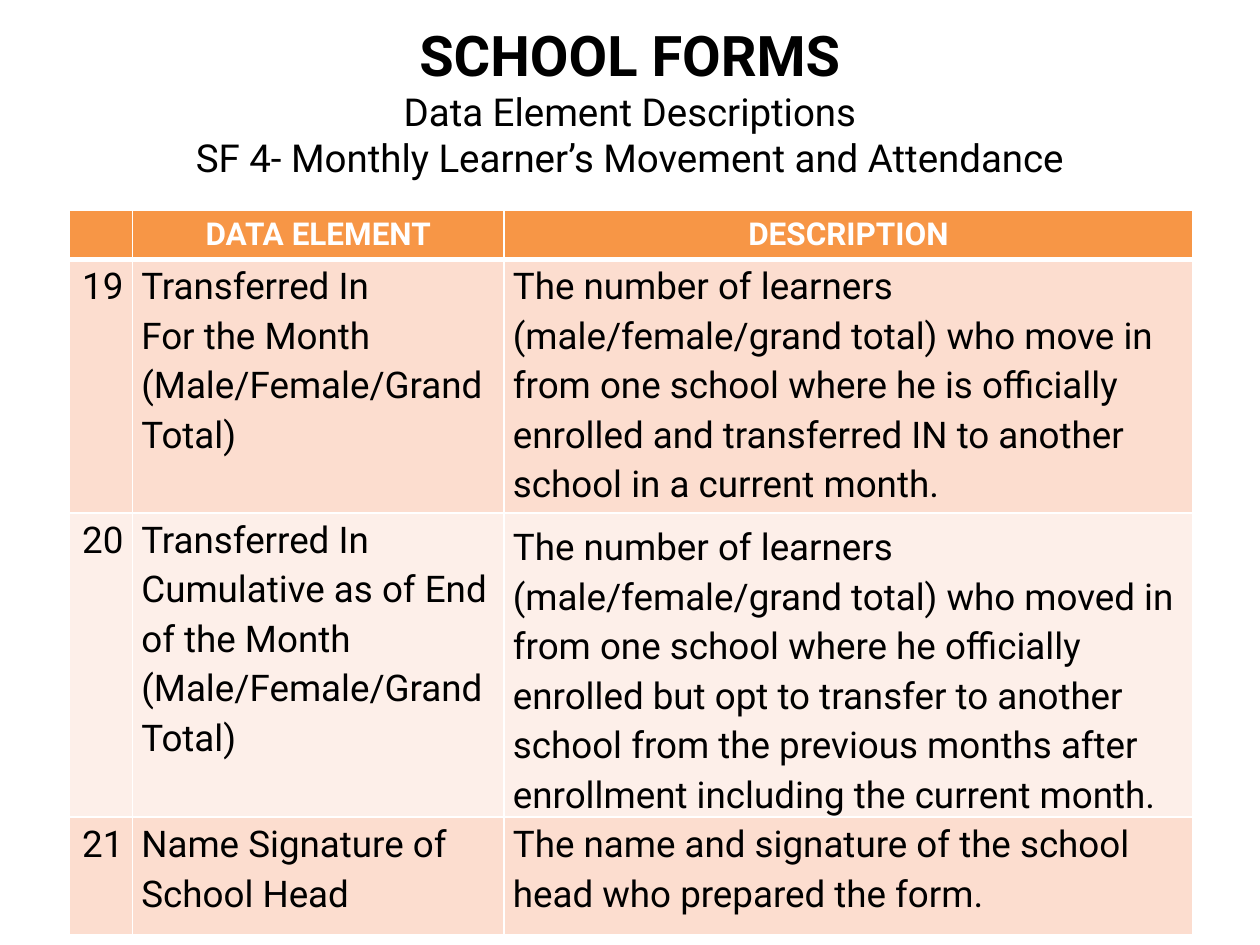
from lxml import etree
from pptx import Presentation
from pptx.dml.color import RGBColor
from pptx.enum import text
from pptx.oxml.ns import qn
from pptx.util import Cm, Pt

FONT = "Roboto"
BLACK = RGBColor(0x00, 0x00, 0x00)
WHITE = RGBColor(0xFF, 0xFF, 0xFF)
ORANGE = RGBColor(0xF7, 0x96, 0x46)
PEACH = RGBColor(0xFC, 0xDD, 0xCF)
PALE_PEACH = RGBColor(0xFD, 0xEF, 0xE9)

LEFT, CENTER, RIGHT = text.PP_ALIGN.LEFT, text.PP_ALIGN.CENTER, text.PP_ALIGN.RIGHT

TITLE_LINES = [
    ("SCHOOL FORMS", 32, True),
    ("Data Element Descriptions", 22, False),
    ("SF 4- Monthly Learner’s Movement and Attendance", 22, False),
]
COLUMN_WIDTHS = [1.27, 7.49, 13.89]
ROW_HEIGHTS = [0.99, 3.89, 5.87, 2.36]
ROWS = [
    ("", "DATA ELEMENT", "DESCRIPTION"),
    ("19", "Transferred In\nFor the Month\n(Male/Female/Grand Total)",
     "The number of learners (male/female/grand total) who move in from one school "
     "where he is officially enrolled and transferred IN to another school in a "
     "current month."),
    ("20", "Transferred In\nCumulative as of End of the Month\n(Male/Female/Grand Total)",
     "The number of learners (male/female/grand total) who moved in from one school "
     "where he officially enrolled but opt to transfer to another school from the "
     "previous months after enrollment including the current month."),
    ("21", "Name Signature of School Head",
     "The name and signature of the school head who prepared the form."),
]


def write_paragraph(paragraph, content, size, color, bold, alignment):
    """Fill a paragraph with text in one font."""
    paragraph.text = content
    paragraph.alignment = alignment
    font = paragraph.font
    font.name, font.size, font.bold = FONT, Pt(size), bold
    font.color.rgb = color


def add_title(slide):
    """Add the centred heading with its two subtitle lines."""
    box = slide.shapes.add_textbox(Cm(1.27), Cm(0.43), Cm(22.86), Cm(3.18))
    frame = box.text_frame
    frame.word_wrap = True
    frame.vertical_anchor = text.MSO_ANCHOR.MIDDLE
    for index, (content, size, bold) in enumerate(TITLE_LINES):
        paragraph = frame.add_paragraph() if index else frame.paragraphs[0]
        write_paragraph(paragraph, content, size, BLACK, bold, CENTER)


def set_borders(cell, bottom_width):
    """Draw white borders round a cell, with a chosen bottom width."""
    properties = cell._tc.get_or_add_tcPr()
    widths = {"a:lnL": 1, "a:lnR": 1, "a:lnT": 1, "a:lnB": bottom_width}
    for position, (tag, width) in enumerate(widths.items()):
        line = etree.Element(qn(tag), w=str(Pt(width)))
        fill = etree.SubElement(line, qn("a:solidFill"))
        etree.SubElement(fill, qn("a:srgbClr"), val=str(WHITE))
        properties.insert(position, line)


def format_cell(cell, content, fill, size, color, bold, alignment, bottom_width):
    """Set the text, fill and borders of a table cell."""
    cell.margin_left = cell.margin_right = Cm(0.18)
    cell.margin_top = cell.margin_bottom = 0
    cell.fill.solid()
    cell.fill.fore_color.rgb = fill
    set_borders(cell, bottom_width)
    paragraph = cell.text_frame.paragraphs[0]
    paragraph.line_spacing = 1.15
    write_paragraph(paragraph, content, size, color, bold, alignment)


def add_element_table(slide):
    """Add the table of data elements and their descriptions."""
    table = slide.shapes.add_table(
        len(ROWS), len(COLUMN_WIDTHS), Cm(1.4), Cm(4.24),
        Cm(sum(COLUMN_WIDTHS)), Cm(sum(ROW_HEIGHTS))).table
    for column, width in zip(table.columns, COLUMN_WIDTHS):
        column.width = Cm(width)
    for row, height in zip(table.rows, ROW_HEIGHTS):
        row.height = Cm(height)
    for row_index, contents in enumerate(ROWS):
        band = PEACH if row_index % 2 else PALE_PEACH
        for column_index, content in enumerate(contents):
            cell = table.cell(row_index, column_index)
            if row_index == 0:
                format_cell(cell, content, ORANGE, 18, WHITE, True, CENTER, 3)
            else:
                alignment = LEFT if column_index else RIGHT
                format_cell(cell, content, band, 21, BLACK, False, alignment, 1)
    table.cell(2, 2).vertical_anchor = text.MSO_ANCHOR.BOTTOM


def main():
    """Build the slide and save it."""
    presentation = Presentation()
    presentation.slide_width, presentation.slide_height = Cm(25.4), Cm(19.05)
    slide = presentation.slides.add_slide(presentation.slide_layouts[6])
    add_title(slide)
    add_element_table(slide)
    presentation.save("out.pptx")


if __name__ == "__main__":
    main()
